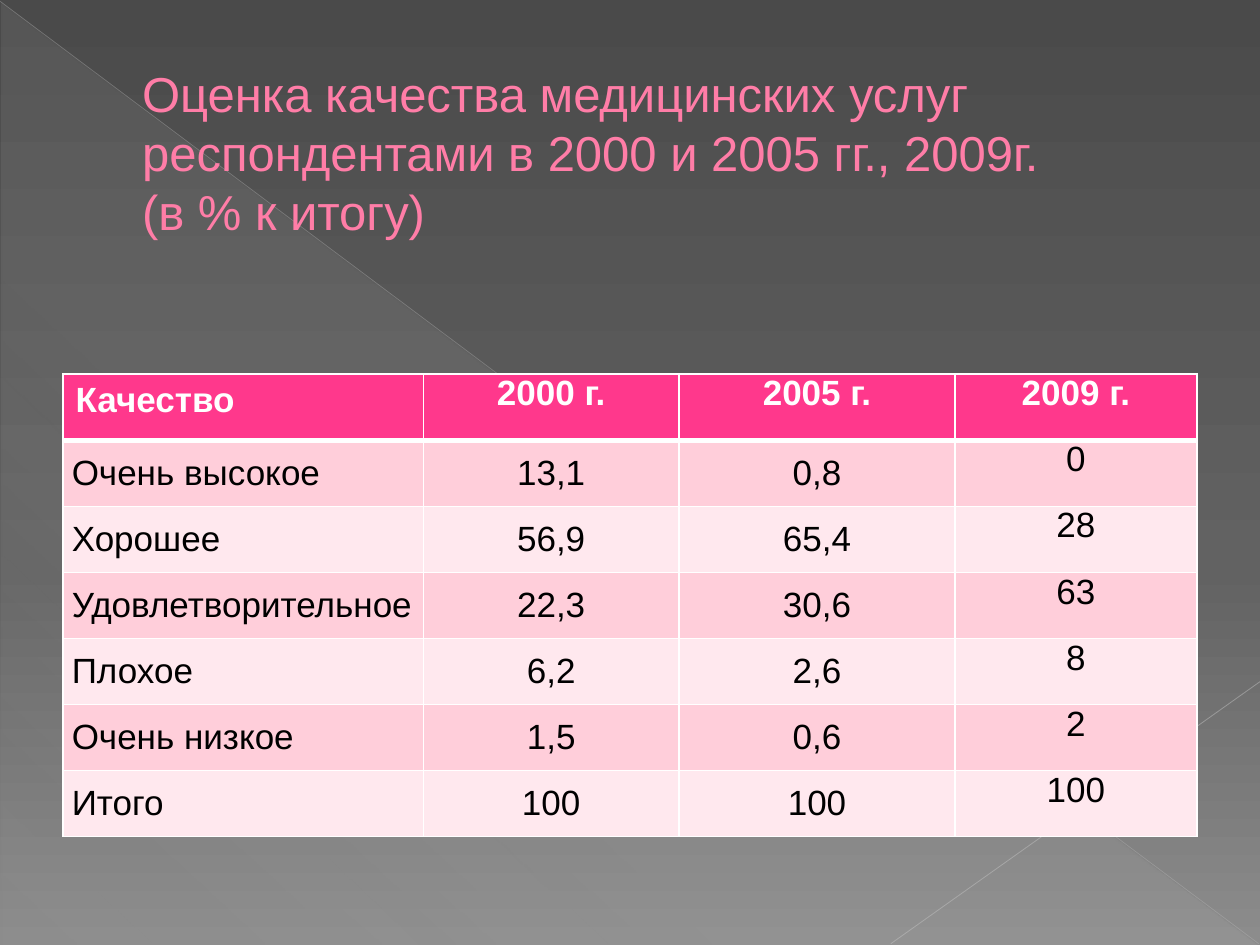
import pptx
import pptx.dml.color
import pptx.enum.shapes
import pptx.enum.text
import pptx.oxml.ns
import pptx.oxml.xmlchemy
import pptx.util
from pptx.util import Inches

RGBColor = pptx.dml.color.RGBColor
ALIGN = pptx.enum.text.PP_ALIGN
ANCHOR = pptx.enum.text.MSO_ANCHOR
qn = pptx.oxml.ns.qn
new_element = pptx.oxml.xmlchemy.OxmlElement

WHITE = RGBColor(0xFF, 0xFF, 0xFF)
BLACK = RGBColor(0, 0, 0)
PINK = RGBColor(0xFF, 0x7D, 0xA7)
DARK_PINK = RGBColor(0xB1, 0x27, 0x61)
HEADER_PINK = RGBColor(0xFF, 0x38, 0x8C)
BAND_PINKS = (RGBColor(0xFF, 0xE8, 0xEE), RGBColor(0xFF, 0xCE, 0xDA))
HAZE = RGBColor(0xD2, 0xD2, 0xD2)
LONG_RAY = RGBColor(0xBF, 0xBF, 0xBF)
SHORT_RAY = RGBColor(0xC6, 0xC6, 0xC6)
BACKDROP = (
    (0, RGBColor(0x4A, 0x4A, 0x4A), 100),
    (60, RGBColor(0x62, 0x62, 0x62), 100),
    (100, RGBColor(0x8C, 0x8C, 0x8C), 100),
)

TITLE = (
    "Оценка качества медицинских услуг респондентами "
    "в 2000 и 2005 гг., 2009г. \v(в % к итогу)"
)
RATINGS = (
    ("Качество", "2000 г.", "2005 г.", "2009 г."),
    ("Очень высокое", "13,1", "0,8", "0"),
    ("Хорошее", "56,9", "65,4", "28"),
    ("Удовлетворительное", "22,3", "30,6", "63"),
    ("Плохое", "6,2", "2,6", "8"),
    ("Очень низкое", "1,5", "0,6", "2"),
    ("Итого", "100", "100", "100"),
)
COLUMN_WIDTHS = (2.86, 2.03, 2.19, 1.92)


def apply(target, values):
    for name, value in values.items():
        setattr(target, name, value)


def add_child(parent, tag, **attributes):
    child = new_element(tag)
    for name, value in attributes.items():
        child.set(name, str(value))
    parent.append(child)
    return child


def add_color(parent, color, opacity=100):
    rgb = add_child(parent, "a:srgbClr", val=color)
    if opacity < 100:
        add_child(rgb, "a:alpha", val=opacity * 1000)


def solid_line(tag, color, width):
    line = new_element(tag)
    line.set("w", str(pptx.util.Pt(width)))
    add_color(add_child(line, "a:solidFill"), color)
    return line


class SlideBuilder:
    font = "Arial"

    def __init__(self, slide):
        self.slide = slide

    def gradient(self, owner, fill, angle, stops):
        fill.gradient()
        fill.gradient_angle = 360 - angle
        stop_list = owner.find(".//" + qn("a:gsLst"))
        for stop in list(stop_list):
            stop_list.remove(stop)
        for position, color, opacity in stops:
            add_color(add_child(stop_list, "a:gs", pos=position * 1000), color, opacity)

    def background(self, stops):
        fill = self.slide.background.fill
        self.gradient(self.slide.element, fill, 90, stops)

    def triangle(self, box, angle, stops):
        haze = self.slide.shapes.add_shape(
            pptx.enum.shapes.MSO_SHAPE.RIGHT_TRIANGLE, *map(Inches, box)
        )
        haze.shadow.inherit = False
        haze.line.fill.background()
        self.gradient(haze.element, haze.fill, angle, stops)

    def ray(self, start, end, color, width, opacity):
        ray = self.slide.shapes.add_connector(
            pptx.enum.shapes.MSO_CONNECTOR.STRAIGHT, *map(Inches, start + end)
        )
        ray.line.width = pptx.util.Pt(width)
        ray.line.color.rgb = color
        properties = ray.element.find(qn("p:spPr"))
        rgb = properties.find(".//" + qn("a:srgbClr"))
        add_child(rgb, "a:alpha", val=opacity * 1000)
        add_child(properties, "a:effectLst")

    def style(self, paragraph, size, color, bold=False):
        for run in paragraph.runs:
            apply(run.font, {"name": self.font, "size": pptx.util.Pt(size), "bold": bold})
            run.font.color.rgb = color

    def title(self, text, box):
        frame = self.slide.shapes.add_textbox(*map(Inches, box)).text_frame
        apply(frame, {"word_wrap": True, "vertical_anchor": ANCHOR.MIDDLE})
        heading = frame.paragraphs[0]
        heading.text = text
        heading._p.get_or_add_pPr().set("marL", str(Inches(0.53)))
        self.style(heading, 28, PINK)
        for run in heading.runs:
            run._r.get_or_add_rPr().insert(0, solid_line("a:ln", DARK_PINK, 0.5))

    def borders(self, cell, widths):
        properties = cell._tc.get_or_add_tcPr()
        for index, (side, width) in enumerate(widths.items()):
            properties.insert(index, solid_line("a:ln" + side, WHITE, width))

    def cell(self, cell, text, row, column):
        header = row == 0
        cell.text = text
        paragraph = cell.text_frame.paragraphs[0]
        self.style(paragraph, 20, WHITE if header else BLACK, header)
        paragraph.alignment = ALIGN.CENTER if column else ALIGN.LEFT
        if row or column:
            apply(cell, {
                "margin_left": Inches(0.07),
                "margin_right": Inches(0.07),
                "margin_top": 0,
                "margin_bottom": 0,
            })
        middle = not header and column < 3
        cell.vertical_anchor = ANCHOR.MIDDLE if middle else ANCHOR.TOP
        cell.fill.solid()
        cell.fill.fore_color.rgb = HEADER_PINK if header else BAND_PINKS[row % 2]
        self.borders(cell, {"L": 1, "R": 1, "T": 3 if row == 1 else 1, "B": 3 if header else 1})

    def table(self, rows, widths, box):
        table = self.slide.shapes.add_table(
            len(rows), len(widths), *map(Inches, box)
        ).table
        for column, width in zip(table.columns, widths):
            column.width = Inches(width)
        for row, texts in enumerate(rows):
            for column, text in enumerate(texts):
                self.cell(table.cell(row, column), text, row, column)


def main():
    deck = pptx.Presentation()
    apply(deck, {"slide_width": Inches(10), "slide_height": Inches(7.5)})
    builder = SlideBuilder(deck.slides.add_slide(deck.slide_layouts[6]))
    builder.background(BACKDROP)
    builder.triangle(
        (0.01, 0.02, 9.98, 7.48), 133, ((0, HAZE, 10), (70, HAZE, 8), (100, HAZE, 1))
    )
    builder.ray((0, 0.01), (9.99, 7.49), LONG_RAY, 0.39, 35)
    builder.ray((10, 5.41), (7.07, 7.49), SHORT_RAY, 0.47, 45)
    builder.title(TITLE, (0.5, 0.3, 9, 1.81))
    builder.table(RATINGS, COLUMN_WIDTHS, (0.5, 2.97, 9, 3.67))
    deck.save("out.pptx")


if __name__ == "__main__":
    main()
